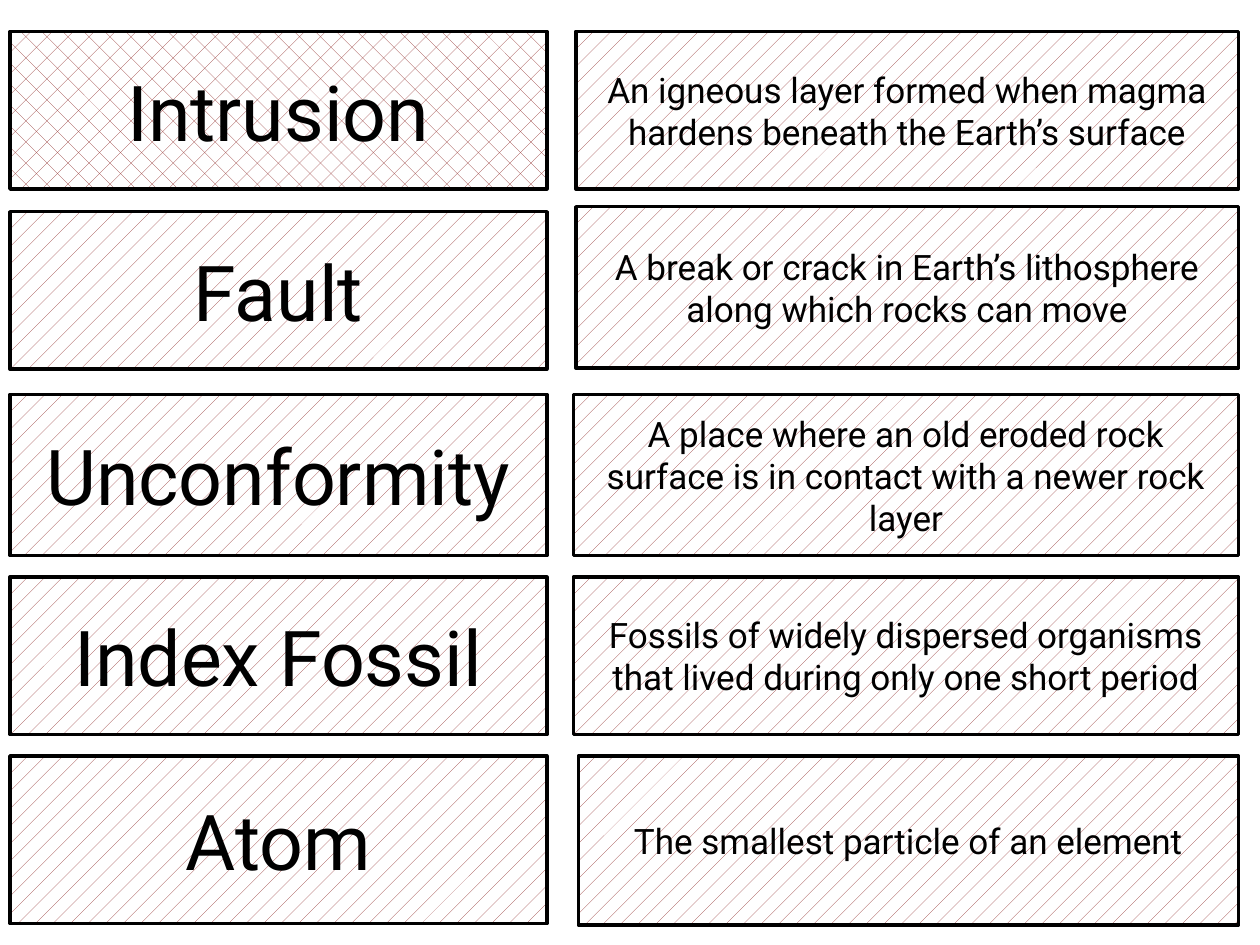
"""Build a slide of geology vocabulary cards: terms on the left, definitions on the right."""
from dataclasses import dataclass

from pptx import Presentation
from pptx.dml.color import RGBColor
from pptx.enum.dml import MSO_PATTERN
from pptx.enum.shapes import MSO_SHAPE
from pptx.enum.text import MSO_ANCHOR, PP_ALIGN
from pptx.util import Inches, Pt


@dataclass(frozen=True)
class Theme:
    font: str = "Roboto"
    ink: RGBColor = RGBColor(0x00, 0x00, 0x00)
    hatch: RGBColor = RGBColor(0x95, 0x37, 0x35)
    paper: RGBColor = RGBColor(0xFF, 0xFF, 0xFF)
    term_size: Pt = Pt(44)
    definition_size: Pt = Pt(20)
    border: Pt = Pt(2)


theme = Theme()
prs = Presentation()
prs.slide_width, prs.slide_height = Inches(10), Inches(7.5)
s = prs.slides.add_slide(prs.slide_layouts[6])


def add_card(text, box, size, pattern):
    """Add one bordered, hatched card with centred text."""
    sp = s.shapes.add_shape(MSO_SHAPE.FLOWCHART_PROCESS, *map(Inches, box))
    sp.shadow.inherit = False
    sp.fill.patterned()
    sp.fill.pattern = pattern
    sp.fill.fore_color.rgb = theme.hatch
    sp.fill.back_color.rgb = theme.paper
    sp.line.color.rgb = theme.ink
    sp.line.width = theme.border
    tf = sp.text_frame
    tf.word_wrap = True
    tf.vertical_anchor = MSO_ANCHOR.MIDDLE
    p = tf.paragraphs[0]
    p.text = text
    p.alignment = PP_ALIGN.CENTER
    p.font.name = theme.font
    p.font.size = size
    p.font.color.rgb = theme.ink


TERM_LEFT, TERM_WIDTH = 0.08, 4.26
DEFINITION_RIGHT = 9.83

cards = [
    ("Intrusion", 0.25, 1.25, MSO_PATTERN.DOTTED_DIAMOND,
     "An igneous layer formed when magma hardens beneath the Earth’s surface", 4.57, 0.25, 1.25),
    ("Fault", 1.68, 1.25, MSO_PATTERN.PERCENT_5,
     "A break or crack in Earth’s lithosphere along which rocks can move", 4.57, 1.64, 1.28),
    ("Unconformity", 3.13, 1.28, MSO_PATTERN.PERCENT_5,
     "A place where an old eroded rock surface is in contact with a newer rock layer", 4.55, 3.13, 1.28),
    ("Index Fossil", 4.58, 1.25, MSO_PATTERN.PERCENT_5,
     "Fossils of widely dispersed organisms that lived during only one short period", 4.55, 4.58, 1.25),
    ("Atom", 6, 1.33, MSO_PATTERN.PERCENT_5,
     "The smallest particle of an element", 4.59, 6, 1.34),
]

for term, term_top, term_height, pattern, definition, left, top, height in cards:
    add_card(term, (TERM_LEFT, term_top, TERM_WIDTH, term_height), theme.term_size, pattern)
    add_card(definition, (left, top, DEFINITION_RIGHT - left, height),
             theme.definition_size, MSO_PATTERN.PERCENT_5)

prs.save("out.pptx")
